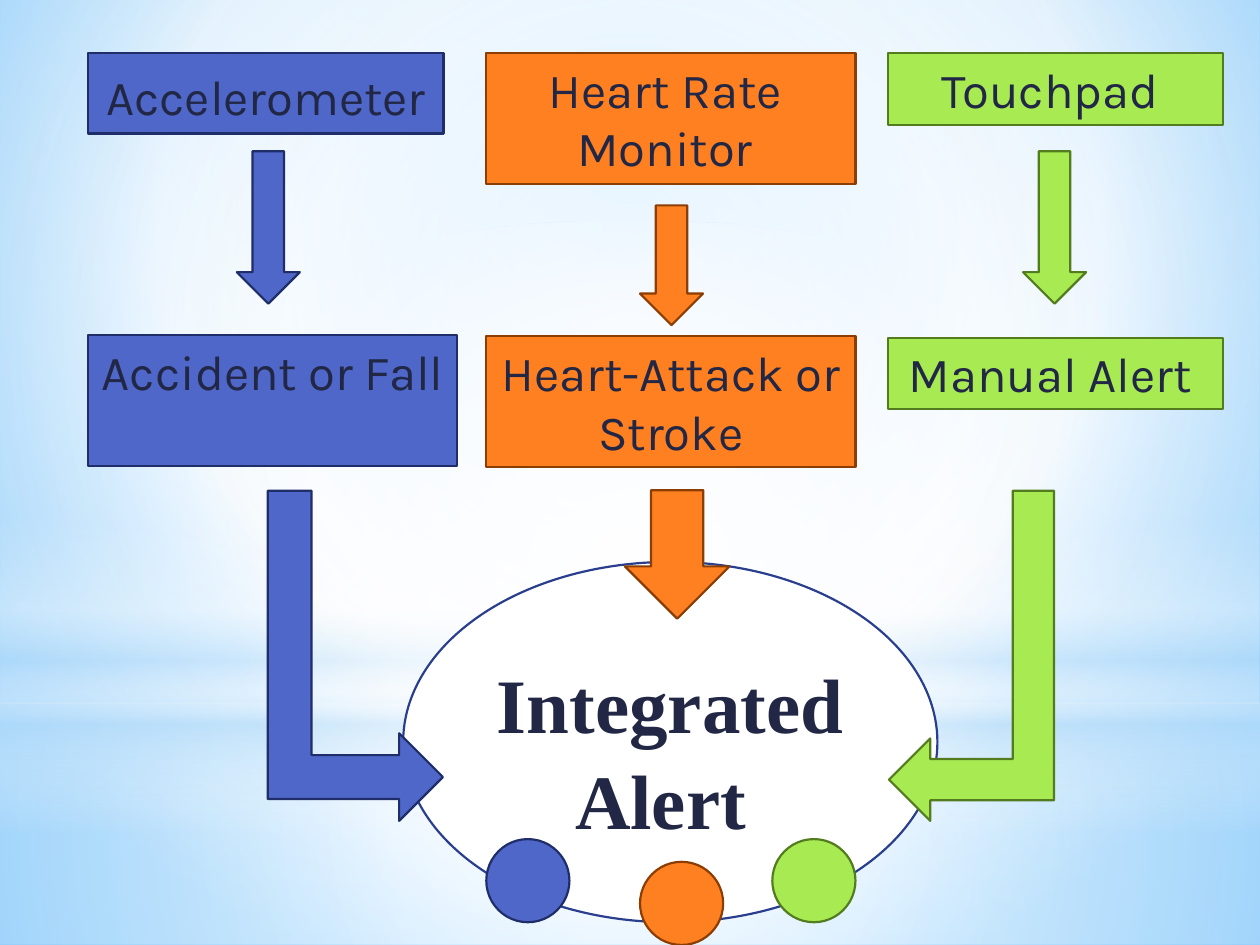
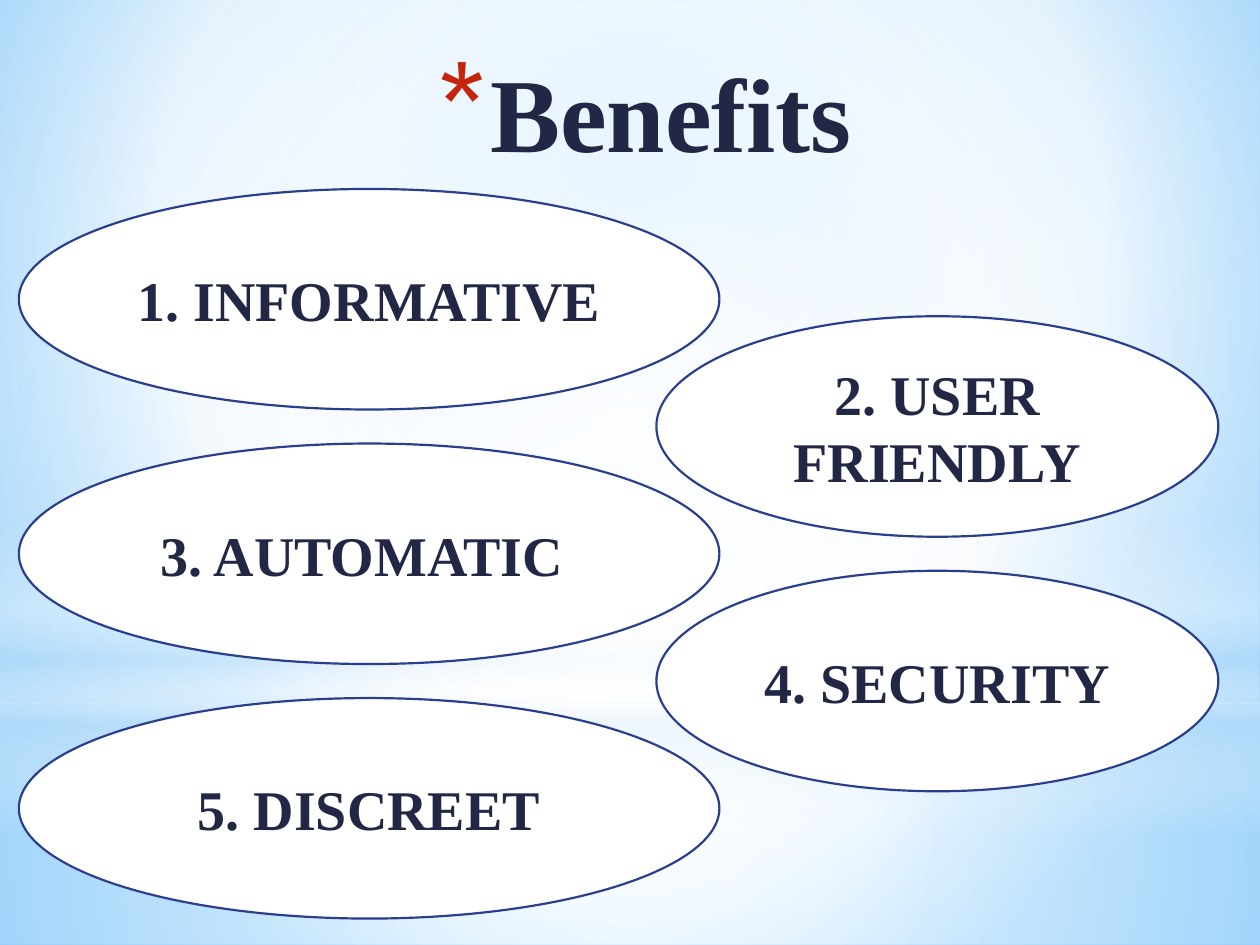
from pptx import Presentation
from pptx.dml.color import RGBColor
from pptx.enum.shapes import MSO_SHAPE
from pptx.enum.text import MSO_ANCHOR, PP_ALIGN
from pptx.oxml import parse_xml
from pptx.oxml.ns import nsdecls, qn
from pptx.util import Inches, Pt

INK = RGBColor(0x21, 0x27, 0x45)
RED = RGBColor(0xC3, 0x26, 0x0C)
WHITE = RGBColor(0xFF, 0xFF, 0xFF)
SKY = RGBColor(0x9E, 0xD5, 0xFF)
DEEP = RGBColor(0x5B, 0xB9, 0xFF)
MIST = RGBColor(0xB4, 0xDC, 0xFA)

# Each tone is a fill and its outline
BLUE = RGBColor(0x4E, 0x67, 0xC8), RGBColor(0x1F, 0x2E, 0x69)
ORANGE = RGBColor(0xFF, 0x80, 0x21), RGBColor(0x8B, 0x3D, 0x02)
GREEN = RGBColor(0xA7, 0xEA, 0x52), RGBColor(0x53, 0x7C, 0x1F)
PLAIN = WHITE, RGBColor(0x2A, 0x3E, 0x8E)

SANS, SERIF = "Karla", "Times New Roman"
RECT, OVAL = MSO_SHAPE.RECTANGLE, MSO_SHAPE.OVAL
DOWN, BENT = MSO_SHAPE.DOWN_ARROW, MSO_SHAPE.BENT_UP_ARROW
CENTRE = (50, 50, 50, 50)


def blend(host, stops, focus=None):
    """Swap the solid fill of host for a gradient: circular round focus, or downward."""
    marks = "".join(
        f'<a:gs pos="{pos * 1000}"><a:srgbClr val="{color}">'
        f'<a:alpha val="{alpha * 1000}"/></a:srgbClr></a:gs>'
        for pos, color, alpha in stops)
    if focus:
        sides = " ".join(f'{side}="{value * 1000}"' for side, value in zip("ltrb", focus))
        course = f'<a:path path="circle"><a:fillToRect {sides}/></a:path>'
    else:
        course = '<a:lin ang="5400000" scaled="0"/>'
    grad = parse_xml(f'<a:gradFill {nsdecls("a")} rotWithShape="1">'
                     f'<a:gsLst>{marks}</a:gsLst>{course}</a:gradFill>')
    host.replace(host.find(qn("a:solidFill")), grad)


class Deck:
    def __init__(self):
        self.show = Presentation()
        self.show.slide_width, self.show.slide_height = Inches(10), Inches(7.5)
        self.slide = None

    def page(self):
        """Start a slide with the shared sky backdrop."""
        self.slide = self.show.slides.add_slide(self.show.slide_layouts[6])
        self.slide.background.fill.solid()
        blend(self.slide._element.cSld.bg.bgPr,
              [(0, SKY, 100), (60, WHITE, 100), (100, DEEP, 100)], (20, 10, 20, 60))
        self.glow(RECT, 5.58, 1.92,
                  [(0, WHITE, 91), (37, WHITE, 76), (100, MIST, 79)], CENTRE)
        self.glow(RECT, 0, 5.58,
                  [(0, WHITE, 89), (48, WHITE, 62), (100, MIST, 79)], CENTRE)
        self.glow(RECT, 4.12, 2.5,
                  [(0, WHITE, 0), (29, WHITE, 30), (45, MIST, 40),
                   (55, WHITE, 26), (65, MIST, 60), (100, WHITE, 0)])
        self.glow(OVAL, 1.75, 5.58, [(0, WHITE, 100), (56, WHITE, 0)], CENTRE)

    def glow(self, kind, top, height, stops, focus=None):
        """Add a full-width translucent band."""
        band = self.shape(kind, 0, top, 10, height, PLAIN)
        band.line.fill.background()
        blend(band._element.spPr, stops, focus)

    def shape(self, kind, left, top, width, height, tone):
        item = self.slide.shapes.add_shape(
            kind, Inches(left), Inches(top), Inches(width), Inches(height))
        item.shadow.inherit = False
        item.fill.solid()
        item.fill.fore_color.rgb, item.line.color.rgb = tone
        item.line.width = Pt(1.25)
        return item

    def label(self, item, text, size, font, bold=False, anchor=MSO_ANCHOR.MIDDLE, tail=()):
        """Set centred text; tail holds further (text, size) runs."""
        frame = item.text_frame
        frame.word_wrap = True
        frame.vertical_anchor = anchor
        frame.text = text
        for para in frame.paragraphs:
            para.alignment = PP_ALIGN.CENTER
            for run in para.runs:
                self.style(run, size, font, bold)
        for extra, points in tail:
            run = para.add_run()
            run.text = extra
            self.style(run, points, font, bold)

    def style(self, run, size, font, bold):
        run.font.size, run.font.name, run.font.bold = Pt(size), font, bold
        run.font.color.rgb = INK

    def box(self, left, top, width, height, tone, text, tail=()):
        item = self.shape(RECT, left, top, width, height, tone)
        self.label(item, text, 28, SANS, anchor=MSO_ANCHOR.TOP, tail=tail)

    def oval(self, left, top, width, height, text, size, tail=()):
        item = self.shape(OVAL, left, top, width, height, PLAIN)
        self.label(item, text, size, SERIF, True, tail=tail)

    def bend(self, left, top, width, height, tone, turn, flip=False):
        item = self.shape(BENT, left, top, width, height, tone)
        item.rotation = turn
        if flip:
            item._element.spPr.xfrm.set("flipH", "1")

    def title(self, text):
        """Add a title led by a red star bullet."""
        item = self.slide.shapes.add_textbox(
            Inches(1.65), Inches(0.25), Inches(7.12), Inches(1.25))
        self.label(item, text, 60, SERIF, True)
        props = item.text_frame.paragraphs[0]._p.get_or_add_pPr()
        props.set("marL", str(Inches(0.35)))
        props.set("indent", str(Inches(-0.35)))
        for part in (f'<a:buClr {nsdecls("a")}><a:srgbClr val="{RED}"/></a:buClr>',
                     f'<a:buSzPct {nsdecls("a")} val="128000"/>',
                     f'<a:buFont {nsdecls("a")} typeface="{SANS}"/>',
                     f'<a:buChar {nsdecls("a")} char="*"/>'):
            props.append(parse_xml(part))


def alert(deck):
    deck.page()
    deck.oval(3.2, 4.46, 4.24, 2.86, "Integrated", 44, [(" ", 54), ("Alert ", 44)])

    # Sensors
    deck.box(0.7, 0.42, 2.82, 0.64, BLUE, "Accelerometer", [(" ", 32)])
    deck.box(3.86, 0.42, 2.93, 1.04, ORANGE, "Heart Rate \nMonitor ")
    deck.box(7.05, 0.42, 2.66, 0.57, GREEN, "Touchpad ")

    # Events
    deck.box(0.7, 2.66, 2.93, 1.04, BLUE, "Accident or Fall ")
    deck.box(3.86, 2.67, 2.93, 1.04, ORANGE, "Heart-Attack or\nStroke")
    deck.box(7.05, 2.68, 2.66, 0.57, GREEN, "Manual Alert ")

    # Arrows from sensor to event, and dots on the oval
    for tone, left, top, height, dot, low in (
            (BLUE, 1.88, 1.2, 1.21, 3.86, 6.66),
            (ORANGE, 5.08, 1.63, 0.95, 5.08, 6.84),
            (GREEN, 8.12, 1.2, 1.21, 6.13, 6.66)):
        deck.shape(DOWN, left, top, 0.5, height, tone)
        deck.shape(OVAL, dot, low, 0.66, 0.66, tone)

    # Arrows from event to alert
    deck.bend(1.51, 4.51, 2.62, 1.39, BLUE, 90)
    deck.shape(DOWN, 4.96, 3.89, 0.83, 1.02, ORANGE)
    deck.bend(6.4, 4.55, 2.62, 1.31, GREEN, 270, flip=True)


def gains(deck):
    deck.page()
    deck.title("Benefits ")
    names = "INFORMATIVE", "USER FRIENDLY", "AUTOMATIC ", "SECURITY", "DISCREET"
    # Ovals alternate between a wide left and a narrow right column
    for i, name in enumerate(names):
        left, width = ((0.15, 5.56), (5.21, 4.46))[i % 2]
        tail = [(" ", 18)] if i == 0 else ()
        deck.oval(left, 1.5 + 1.01 * i, width, 1.75, f"{i + 1}. {name}", 32, tail)


def main():
    deck = Deck()
    alert(deck)
    gains(deck)
    deck.show.save("out.pptx")


if __name__ == "__main__":
    main()
